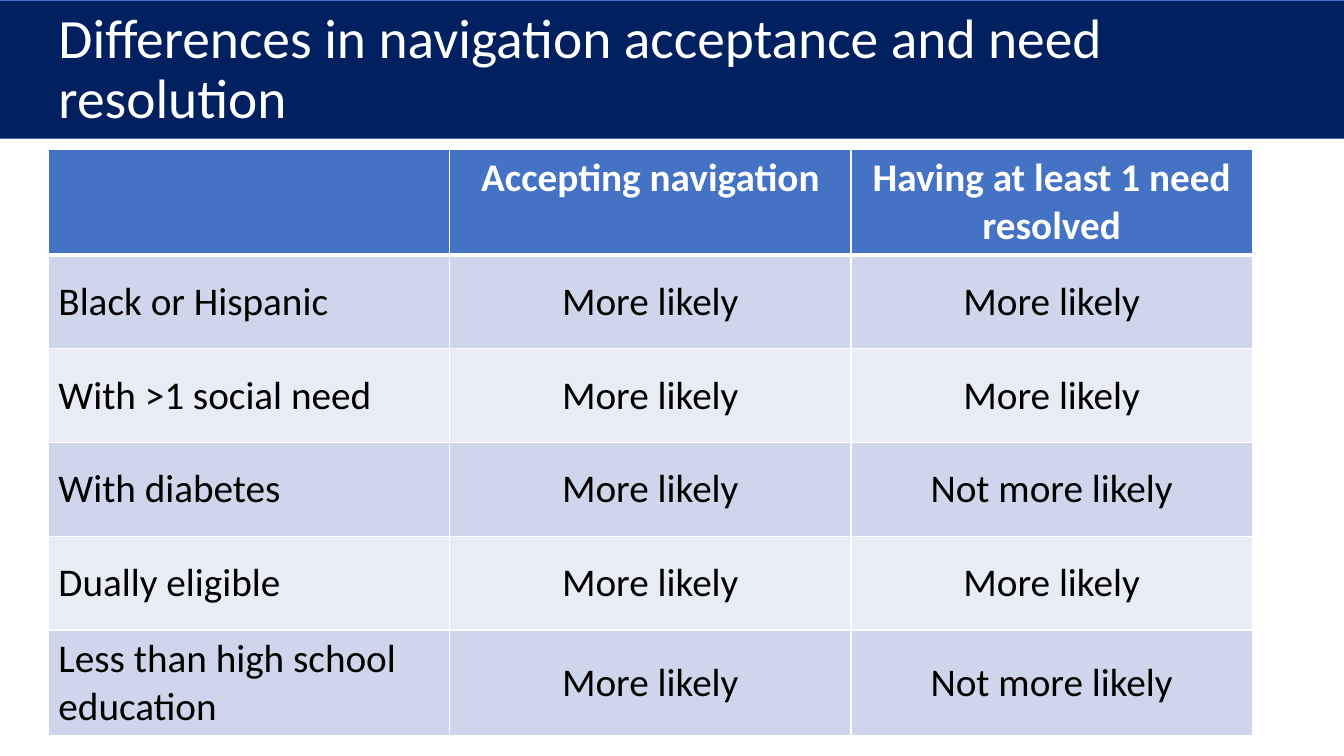
from lxml import etree
from pptx import Presentation
from pptx.dml.color import RGBColor
from pptx.enum.shapes import MSO_SHAPE
from pptx.enum.text import MSO_ANCHOR, MSO_AUTO_SIZE, PP_ALIGN
from pptx.oxml.ns import qn
from pptx.util import Inches, Pt

RECT = MSO_SHAPE.RECTANGLE
TOP, MIDDLE = MSO_ANCHOR.TOP, MSO_ANCHOR.MIDDLE
LEFT, CENTER = PP_ALIGN.LEFT, PP_ALIGN.CENTER
NO_FIT = MSO_AUTO_SIZE.NONE

NAVY, BLUE, WHITE, BLACK = "002060", "4472C4", "FFFFFF", "000000"
BANDS = ["CFD5EA", "E9EBF5"]
TITLE = "Differences in navigation acceptance and need resolution"
ROWS = [
    ["", "Accepting navigation", "Having at least 1 need resolved"],
    ["Black or Hispanic", "More likely", "More likely"],
    ["With >1 social need", "More likely", "More likely"],
    ["With diabetes", "More likely", "Not more likely"],
    ["Dually eligible", "More likely", "More likely"],
    ["Less than high school education", "More likely", "Not more likely"],
]


def paint(target, color):
    target.solid()
    target.fore_color.rgb = RGBColor.from_string(color)


def write(frame, text, size=28, color=BLACK, bold=False, align=LEFT, space=1):
    para = frame.paragraphs[0]
    para.alignment = align
    para.line_spacing = space
    run = para.add_run()
    run.text = text
    font = run.font
    font.name, font.size, font.bold = "Calibri", Pt(size), bold
    paint(font.fill, color)


def border(cell, widths):
    props = cell._tc.get_or_add_tcPr()
    for spot, (side, width) in enumerate(zip("LRTB", widths)):
        line = etree.Element(qn(f"a:ln{side}"), w=str(Pt(width)))
        fill = etree.SubElement(line, qn("a:solidFill"))
        etree.SubElement(fill, qn("a:srgbClr"), val=WHITE)
        props.insert(spot, line)


class Page:
    def __init__(self, deck):
        self.slide = deck.slides.add_slide(deck.slide_layouts[5])
        self.shapes = self.slide.shapes

    def band(self, left, top, width, height):
        box = self.shapes.add_shape(
            RECT, Inches(left), Inches(top), Inches(width), Inches(height))
        box.shadow.inherit = False
        paint(box.fill, NAVY)
        paint(box.line.fill, BLUE)
        box.line.width = Pt(0.5)

    def title(self, text, left, top, width, height):
        head = self.shapes.title
        head.left, head.top = Inches(left), Inches(top)
        head.width, head.height = Inches(width), Inches(height)
        frame = head.text_frame
        frame.word_wrap = True
        frame.auto_size = NO_FIT
        frame.vertical_anchor = MIDDLE
        write(frame, text, size=39.6, color=WHITE, space=0.9)
        self.shapes.element.append(head.element)

    def table(self, rows, left, top, wide, high):
        count, span = len(rows), len(rows[0])
        grid = self.shapes.add_table(
            count, span, Inches(left), Inches(top),
            Inches(wide * span), Inches(high * count)).table
        for col in grid.columns:
            col.width = Inches(wide)
        for i, row in enumerate(rows):
            grid.rows[i].height = Inches(high)
            for j, text in enumerate(row):
                self.cell(grid.cell(i, j), text, i, j)

    def cell(self, cell, text, i, j):
        head = i == 0
        paint(cell.fill, BLUE if head else BANDS[(i - 1) % 2])
        border(cell, [1, 1, 3 if i == 1 else 1, 3 if head else 1])
        cell.vertical_anchor = TOP if head else MIDDLE
        if text:
            write(cell.text_frame, text, color=WHITE if head else BLACK,
                  bold=head, align=CENTER if j else LEFT)


def main():
    deck = Presentation()
    deck.slide_width, deck.slide_height = Inches(13.33), Inches(7.5)
    page = Page(deck)
    page.band(-0.01, 0, 13.36, 1.37)
    page.table(ROWS, 0.48, 1.48, 3.98, 0.93)
    page.title(TITLE, 0.48, 0.23, 11.5, 0.94)
    deck.save("out.pptx")


if __name__ == "__main__":
    main()
